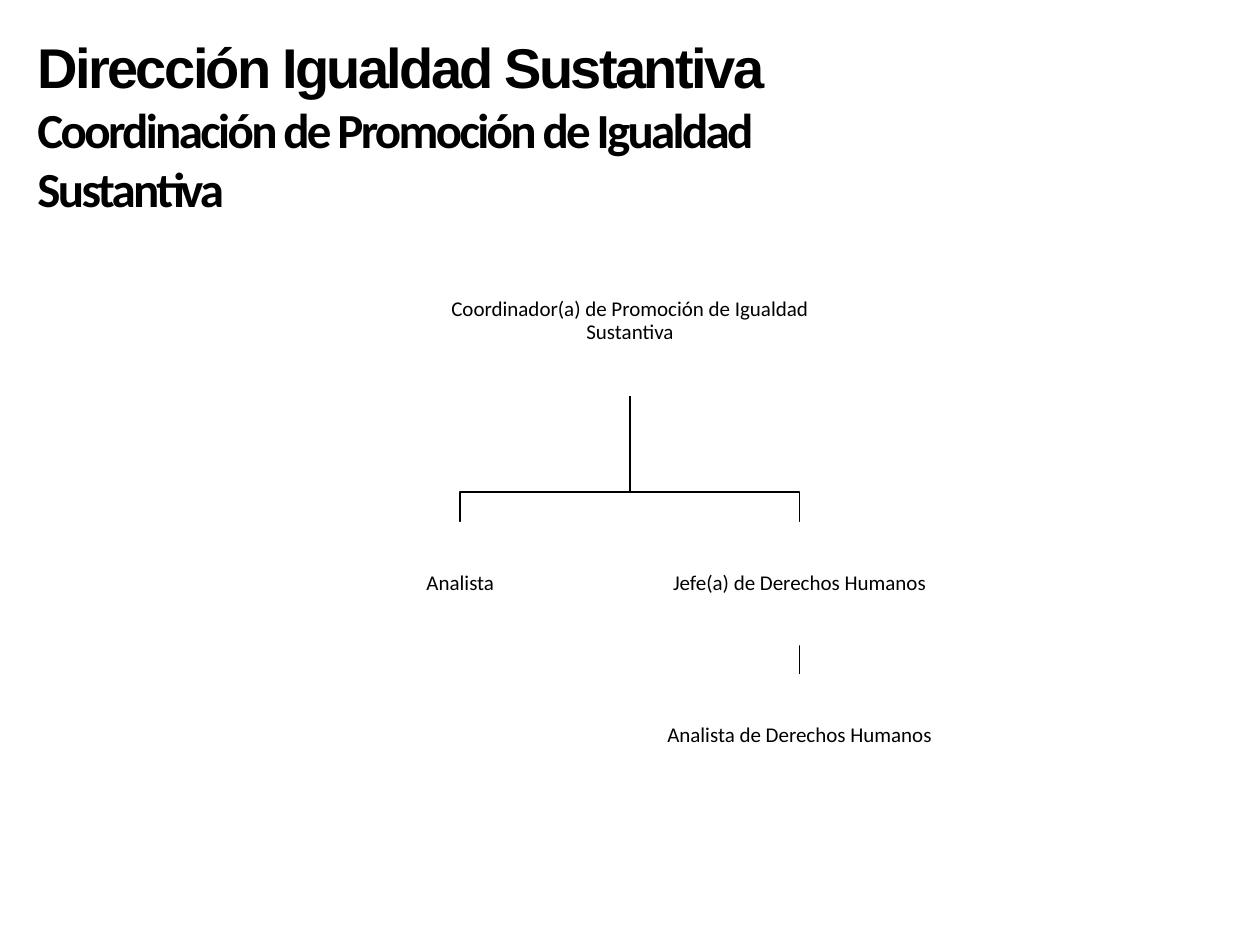
import pptx
import pptx.dml.color
import pptx.enum.shapes
import pptx.enum.text
import pptx.oxml.ns
import pptx.util
from lxml import etree

Cm = pptx.util.Cm
Pt = pptx.util.Pt
COLORS = {"text": "000000", "line": "000000", "box": "FFFFFF"}


def rgb(name):
    """Return the named colour."""
    return pptx.dml.color.RGBColor.from_string(COLORS[name])


def add_heading(slide, left, top, width, height):
    """Place the two-level heading in the title placeholder."""
    title = slide.shapes.title
    title.left, title.top, title.width, title.height = map(Cm, (left, top, width, height))
    frame = title.text_frame
    frame.word_wrap = True
    frame.auto_size = pptx.enum.text.MSO_AUTO_SIZE.NONE
    frame.vertical_anchor = pptx.enum.text.MSO_ANCHOR.TOP
    frame.text = "Dirección Igualdad Sustantiva\nCoordinación de Promoción de Igualdad Sustantiva"
    for paragraph, size, font in zip(frame.paragraphs, (32, 28), ("Arial", "Calibri")):
        paragraph.alignment = pptx.enum.text.PP_ALIGN.LEFT
        paragraph.font.size = Pt(size)
        paragraph.font.name = font
        paragraph.font.bold = True
        paragraph.font.color.rgb = rgb("text")
        for run in paragraph.runs:
            run._r.get_or_add_rPr().set("spc", "-150")


def add_position(slide, text, center, top, width, height):
    """Add one position of the chart, centred on a horizontal coordinate."""
    shape = slide.shapes.add_shape(
        pptx.enum.shapes.MSO_SHAPE.RECTANGLE,
        Cm(center - width / 2), Cm(top), Cm(width), Cm(height))
    shape.shadow.inherit = False
    shape.fill.solid()
    shape.fill.fore_color.rgb = rgb("box")
    shape.line.fill.background()
    frame = shape.text_frame
    frame.word_wrap = True
    frame.vertical_anchor = pptx.enum.text.MSO_ANCHOR.MIDDLE
    frame.margin_left = frame.margin_right = frame.margin_top = frame.margin_bottom = Cm(0.02)
    frame.text = text
    paragraph = frame.paragraphs[0]
    paragraph.alignment = pptx.enum.text.PP_ALIGN.CENTER
    paragraph.line_spacing = 0.9
    paragraph.font.size = Pt(12)
    paragraph.font.name = "Calibri"
    paragraph.font.color.rgb = rgb("text")


def style_line(shape):
    """Give a link its thin dark line."""
    shape.line.color.rgb = rgb("line")
    shape.line.width = Pt(1)


def add_branch(slide, start, end, drop):
    """Draw an angled link that turns at a fixed drop above its end."""
    (start_x, start_y), (end_x, end_y) = start, end
    turn = end_y - drop
    builder = slide.shapes.build_freeform(Cm(start_x), Cm(start_y))
    points = [(start_x, turn), (end_x, turn), (end_x, end_y)]
    builder.add_line_segments([(Cm(x), Cm(y)) for x, y in points], close=False)
    branch = builder.convert_to_shape()
    branch.shadow.inherit = False
    branch.fill.background()
    style_line(branch)


def add_stem(slide, x, top, bottom):
    """Draw a straight vertical link."""
    stem = slide.shapes.add_connector(
        pptx.enum.shapes.MSO_CONNECTOR.STRAIGHT, Cm(x), Cm(top), Cm(x), Cm(bottom))
    etree.SubElement(stem._element.spPr, pptx.oxml.ns.qn("a:effectLst"))
    style_line(stem)


def add_organization_chart(slide, left, top, width):
    """Draw the chart of positions and its links."""
    center = left + width / 2
    root_height, height, offset = 3, 2.49, 3.42
    child_top = top + 5.54
    analyst_top = child_top + 3.07
    left_center, right_center = center - offset, center + offset
    add_stem(slide, right_center, child_top + height, analyst_top)
    for child_center in (right_center, left_center):
        add_branch(slide, (center, top + root_height), (child_center, child_top), 0.6)
    positions = [
        ("Coordinador(a) de Promoción de Igualdad Sustantiva", center, top, 7.4, root_height),
        ("Analista", left_center, child_top, 5.66, height),
        ("Jefe(a) de Derechos Humanos", right_center, child_top, 5.66, height),
        ("Analista de Derechos Humanos", right_center, analyst_top, 5.56, height),
    ]
    for position in positions:
        add_position(slide, *position)


def main():
    """Build and save the presentation."""
    presentation = pptx.Presentation()
    presentation.slide_width, presentation.slide_height = Cm(25.4), Cm(19.05)
    slide = presentation.slides.add_slide(presentation.slide_layouts[5])
    add_heading(slide, 0.5, 0.53, 18.47, 4.01)
    add_organization_chart(slide, 6.45, 4.98, 12.5)
    presentation.save("out.pptx")


if __name__ == "__main__":
    main()
